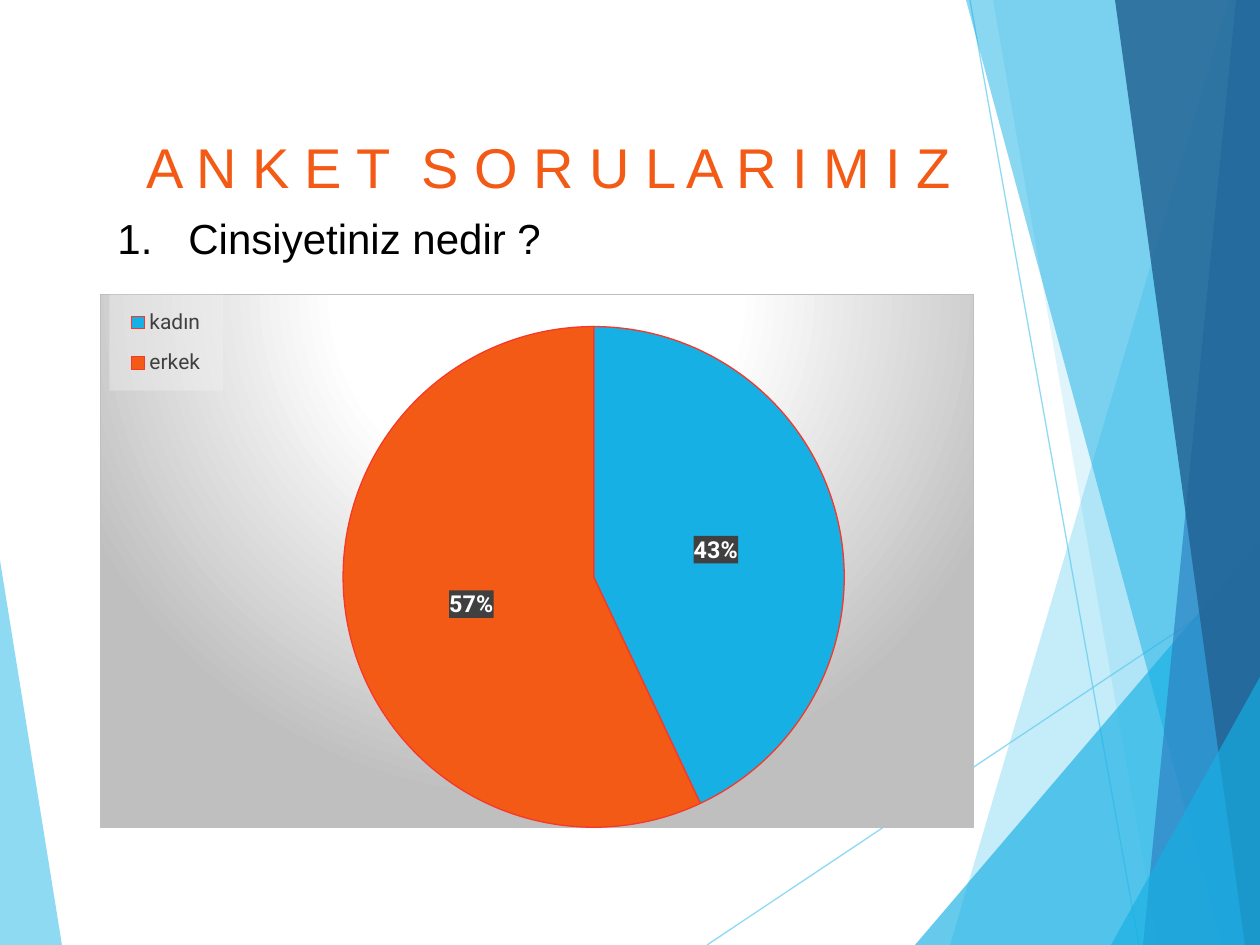
"""Builds the survey question slide with its pie chart of answers."""
from dataclasses import dataclass

from lxml import etree
from pptx import Presentation
from pptx.chart.data import CategoryChartData
from pptx.dml.color import RGBColor
from pptx.enum.chart import XL_CHART_TYPE, XL_LABEL_POSITION, XL_LEGEND_POSITION
from pptx.enum.shapes import MSO_CONNECTOR
from pptx.enum.text import MSO_ANCHOR, PP_ALIGN
from pptx.oxml import parse_xml
from pptx.oxml.ns import nsdecls, qn
from pptx.util import Pt

PIE = XL_CHART_TYPE.PIE
CENTER = XL_LABEL_POSITION.CENTER
RIGHT = XL_LEGEND_POSITION.RIGHT
STRAIGHT = MSO_CONNECTOR.STRAIGHT
TOP = MSO_ANCHOR.TOP
LEFT, JUSTIFY = PP_ALIGN.LEFT, PP_ALIGN.JUSTIFY

PX = 914400 / 126
W, H = 1260, 945


@dataclass(frozen=True)
class Theme:
    text_font: str = "Arial"
    chart_font: str = "Roboto"
    sky: str = "5FCBEF"
    cyan: str = "17B0E4"
    blue: str = "2E83C3"
    navy: str = "226292"
    orange: str = "F35A15"
    red: str = "F73829"
    black: str = "000000"
    white: str = "FFFFFF"
    gray: str = "BFBFBF"
    dark: str = "404040"
    pale: str = "F2F2F2"
    title_size: float = 32
    question_size: float = 24
    chart_size: float = 10
    legend_size: float = 12
    label_size: float = 13.3
    thin: float = 0.75


def emu(px):
    return round(px * PX)


def rgb(color):
    return RGBColor.from_string(color)


def set_font(font, name, size, color, bold=False):
    font.name, font.size, font.bold = name, Pt(size), bold
    font.color.rgb = rgb(color)


def set_alpha(element, percent):
    for color in element.iter(qn("a:srgbClr")):
        etree.SubElement(color, qn("a:alpha"), val=str(percent * 1000))


def chart_props(content):
    return parse_xml(f'<c:spPr {nsdecls("c", "a")}>{content}</c:spPr>')


def solid(color, alpha):
    return (f'<a:solidFill><a:srgbClr val="{color}">'
            f'<a:alpha val="{alpha * 1000}"/></a:srgbClr></a:solidFill>')


def set_layout(parent, index, box, inner=False):
    for old in parent.findall(qn("c:layout")):
        parent.remove(old)
    target = '<c:layoutTarget val="inner"/>' if inner else ""
    modes = "".join(f'<c:{k}Mode val="edge"/>' for k in "xy")
    values = "".join(f'<c:{k} val="{v}"/>' for k, v in zip("xywh", box))
    parent.insert(index, parse_xml(
        f'<c:layout {nsdecls("c")}><c:manualLayout>{target}{modes}{values}'
        "</c:manualLayout></c:layout>"))


class SlideBuilder:
    def __init__(self, slide, theme):
        self.s, self.theme = slide, theme

    def facet(self, points, color, alpha):
        builder = self.s.shapes.build_freeform(*points[0], scale=PX)
        builder.add_line_segments(points[1:], close=True)
        sp = builder.convert_to_shape()
        sp.shadow.inherit = False
        sp.fill.solid()
        sp.fill.fore_color.rgb = rgb(color)
        set_alpha(sp.fill._xPr, alpha)
        sp.line.fill.background()

    def line(self, start, end, color, alpha):
        cx = self.s.shapes.add_connector(STRAIGHT, *map(emu, start + end))
        cx.line.color.rgb = rgb(color)
        cx.line.width = Pt(self.theme.thin)
        props = cx._element.spPr
        set_alpha(props, alpha)
        etree.SubElement(props, qn("a:effectLst"))

    def text(self, text, box, *, size, color, align=LEFT, number_indent=0):
        tf = self.s.shapes.add_textbox(*map(emu, box)).text_frame
        tf.word_wrap = True
        tf.vertical_anchor = TOP
        p = tf.paragraphs[0]
        p.alignment = align
        if number_indent:
            props = p._p.get_or_add_pPr()
            props.set("marL", str(emu(number_indent)))
            props.set("indent", str(-emu(number_indent)))
            etree.SubElement(props, qn("a:buFont"), typeface=self.theme.text_font)
            etree.SubElement(props, qn("a:buAutoNum"), type="arabicPeriod")
        r = p.add_run()
        r.text = text
        set_font(r.font, self.theme.text_font, size, color)

    def pie(self, box, name, slices, plot_box, legend_box):
        t = self.theme
        data = CategoryChartData()
        data.categories = [label for label, _, _ in slices]
        data.add_series(name, [value for _, value, _ in slices])
        chart = self.s.shapes.add_chart(PIE, *map(emu, box), data).chart
        chart.has_title = False
        set_font(chart.font, t.chart_font, t.chart_size, t.black)
        series = chart.plots[0].series[0]
        for i, (_, _, color) in enumerate(slices):
            fmt = series.points[i].format
            fmt.fill.solid()
            fmt.fill.fore_color.rgb = rgb(color)
            fmt.line.color.rgb = rgb(t.red)
            fmt.line.width = Pt(t.thin)
        self.labels(series.data_labels)
        self.legend(chart, legend_box)
        root = chart._chartSpace
        set_layout(root.find(".//" + qn("c:plotArea")), 0, plot_box, inner=True)
        root.find(qn("c:chart")).addnext(self.backdrop())

    def labels(self, labels):
        t = self.theme
        labels.show_percentage, labels.show_value = True, False
        labels.number_format, labels.number_format_is_linked = "0%", False
        labels.position = CENTER
        set_font(labels.font, t.chart_font, t.label_size, t.white, bold=True)
        text_props = labels._element.find(qn("c:txPr"))
        text_props.addprevious(chart_props(solid(t.dark, 90)))

    def legend(self, chart, box):
        t = self.theme
        chart.has_legend = True
        legend = chart.legend
        legend.position = RIGHT
        legend.include_in_layout = False
        set_font(legend.font, t.chart_font, t.legend_size, t.dark)
        element = legend._element
        set_layout(element, 1, box)
        element.find(qn("c:txPr")).addprevious(chart_props(solid(t.pale, 40)))

    def backdrop(self):
        t = self.theme
        stops = "".join(
            f'<a:gs pos="{pos * 1000}"><a:srgbClr val="{color}"/></a:gs>'
            for pos, color in ((0, t.white), (39, t.white), (100, t.gray)))
        return chart_props(
            f'<a:gradFill><a:gsLst>{stops}</a:gsLst><a:path path="circle">'
            '<a:fillToRect l="50000" t="-80000" r="50000" b="180000"/></a:path>'
            f'</a:gradFill><a:ln w="{Pt(t.thin)}"><a:solidFill>'
            f'<a:srgbClr val="{t.gray}"/></a:solidFill></a:ln>')


def main():
    prs = Presentation()
    prs.slide_width, prs.slide_height = emu(W), emu(H)
    t = Theme()
    b = SlideBuilder(prs.slides.add_slide(prs.slide_layouts[6]), t)

    b.facet([(0, 560), (62, H), (0, H)], t.sky, 70)
    b.line((707, H), (W, 576), t.sky, 70)
    b.line((970, 0), (1139, H), t.sky, 70)
    right_facets = [
        ([(1229, 0), (950, H), (W, H), (W, 0)], t.sky, 36),
        ([(993, 0), (1158, H), (W, H), (W, 0)], t.sky, 20),
        ([(915, H), (W, 541), (W, H)], t.cyan, 66),
        ([(966, 0), (1222, H), (W, H), (W, 0)], t.cyan, 50),
        ([(1236, 0), (1143, H), (W, H), (W, 0)], t.blue, 70),
        ([(1115, 0), (1245, H), (W, H), (W, 0)], t.navy, 82),
        ([(1111, H), (W, 677), (W, H)], t.cyan, 66),
    ]
    for points, color, alpha in right_facets:
        b.facet(points, color, alpha)

    b.text("Cinsiyetiniz nedir ?", (105, 206, 874, 63), size=t.question_size,
           color=t.black, align=JUSTIFY, number_indent=71)
    b.pie((100, 294, 874, 534), "Series 1",
          [("kadın", 43, t.cyan), ("erkek", 57, t.orange)],
          plot_box=(0.21, 0.06, 0.71, 0.94), legend_box=(0.01, 0, 0.13, 0.18))
    b.text("A N K E T  S O R U L A R I M I Z", (134, 126, 874, 181),
           size=t.title_size, color=t.orange)
    prs.save("out.pptx")


if __name__ == "__main__":
    main()
